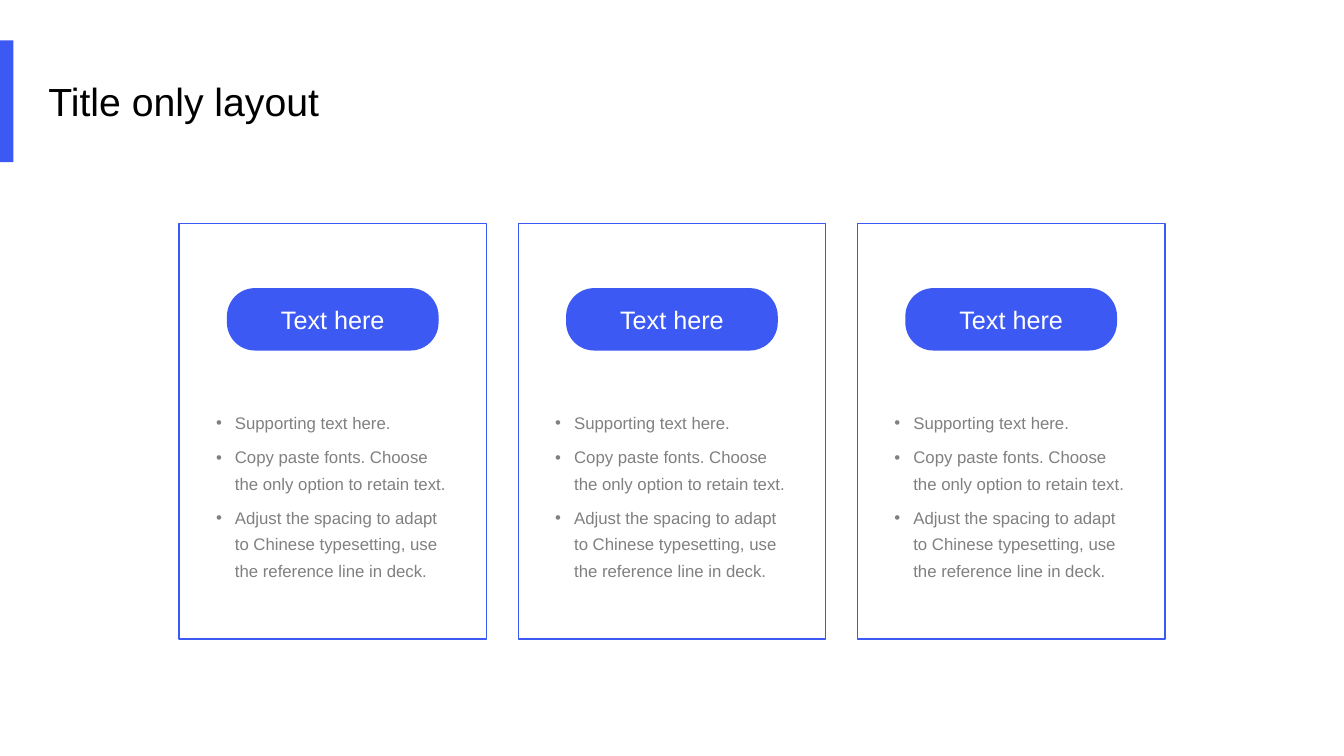
from dataclasses import dataclass

from lxml.etree import SubElement
from pptx import Presentation
from pptx.dml.color import RGBColor
from pptx.enum.shapes import MSO_SHAPE as Shape
from pptx.enum.text import MSO_ANCHOR as Anchor, MSO_AUTO_SIZE as AutoSize, PP_ALIGN as Align
from pptx.oxml.ns import qn
from pptx.util import Pt

TITLE = "Title only layout"
SUPPORTING_LINES = [
    "Supporting text here.",
    "Copy paste fonts. Choose the only option to retain text.",
    "Adjust the spacing to adapt to Chinese typesetting, use the reference line in deck.",
]
CARDS = [("Text here", SUPPORTING_LINES)] * 3


@dataclass(frozen=True)
class Theme:
    font: str = "Arial"
    accent: RGBColor = RGBColor(0x3C, 0x59, 0xF3)
    title: RGBColor = RGBColor(0, 0, 0)
    body: RGBColor = RGBColor(0x80, 0x80, 0x80)
    label: RGBColor = RGBColor(0xFF, 0xFF, 0xFF)
    title_size: float = 28
    label_size: float = 18
    body_size: float = 12


THEME = Theme()
SLIDE_WIDTH, SLIDE_HEIGHT = 960, 540
CARD_WIDTH, CARD_HEIGHT, CARD_TOP = 219.6, 296.6, 159.8
CARD_PITCH = 242.3
FIRST_CARD_LEFT = (SLIDE_WIDTH - CARD_WIDTH - CARD_PITCH * (len(CARDS) - 1)) / 2
PILL_WIDTH, PILL_HEIGHT, PILL_TOP = 151.2, 44.6, 205.8
LIST_WIDTH, LIST_HEIGHT, LIST_TOP = 185, 155.5, 286.8
LIST_INSET = 19.2
BULLET_INDENT = 13.5


def place(shape, left, top, width, height):
    shape.left, shape.top = Pt(left), Pt(top)
    shape.width, shape.height = Pt(width), Pt(height)


def add_box(slide, kind, left, top, width, height, fill=None, line=None):
    shape = slide.shapes.add_shape(kind, Pt(left), Pt(top), Pt(width), Pt(height))
    shape.shadow.inherit = False
    if fill is None:
        shape.fill.background()
    else:
        shape.fill.solid()
        shape.fill.fore_color.rgb = fill
    if line is None:
        shape.line.fill.background()
    else:
        shape.line.color.rgb = line
        shape.line.width = Pt(1)
    return shape


def write(shape, lines, size, color, align=Align.LEFT, anchor=Anchor.TOP,
          spacing=1, after=0, bullet=None):
    frame = shape.text_frame
    frame.text = "\n".join(lines)
    frame.word_wrap = True
    frame.auto_size = AutoSize.NONE
    frame.vertical_anchor = anchor
    for paragraph in frame.paragraphs:
        paragraph.alignment = align
        paragraph.line_spacing = spacing
        paragraph.space_before, paragraph.space_after = Pt(0), Pt(after)
        if bullet:
            add_bullet(paragraph, bullet)
        font = paragraph.runs[0].font
        font.name, font.size, font.bold = THEME.font, Pt(size), False
        font.color.rgb = color


def add_bullet(paragraph, character):
    properties = paragraph._p.get_or_add_pPr()
    properties.set("marL", str(Pt(BULLET_INDENT)))
    properties.set("indent", str(-Pt(BULLET_INDENT)))
    SubElement(properties, qn("a:buFont"), typeface=THEME.font)
    SubElement(properties, qn("a:buChar"), char=character)


def add_card(slide, left, label, lines, list_placeholder):
    add_box(slide, Shape.RECTANGLE, left, CARD_TOP, CARD_WIDTH, CARD_HEIGHT, line=THEME.accent)
    pill = add_box(slide, Shape.ROUNDED_RECTANGLE, left + (CARD_WIDTH - PILL_WIDTH) / 2,
                   PILL_TOP, PILL_WIDTH, PILL_HEIGHT, fill=THEME.accent)
    pill.adjustments[0] = 0.45
    write(pill, [label], THEME.label_size, THEME.label, align=Align.CENTER, anchor=Anchor.MIDDLE)
    place(list_placeholder, left + LIST_INSET, LIST_TOP, LIST_WIDTH, LIST_HEIGHT)
    write(list_placeholder, lines, THEME.body_size, THEME.body, spacing=1.3, after=6, bullet="•")


def main():
    presentation = Presentation()
    presentation.slide_width, presentation.slide_height = Pt(SLIDE_WIDTH), Pt(SLIDE_HEIGHT)
    comparison_layout = presentation.slide_layouts[4]
    slide = presentation.slides.add_slide(comparison_layout)
    title, *bodies = slide.placeholders

    add_box(slide, Shape.RECTANGLE, 0, 28.8, 9.5, 87.1, fill=THEME.accent)
    place(title, 27.4, 51.8, 252.7, 41)
    write(title, [TITLE], THEME.title_size, THEME.title)

    for index, ((label, lines), body) in enumerate(zip(CARDS, bodies)):
        add_card(slide, FIRST_CARD_LEFT + index * CARD_PITCH, label, lines, body)
    for unused in bodies[len(CARDS):]:
        unused.element.getparent().remove(unused.element)

    presentation.save("out.pptx")


if __name__ == "__main__":
    main()
